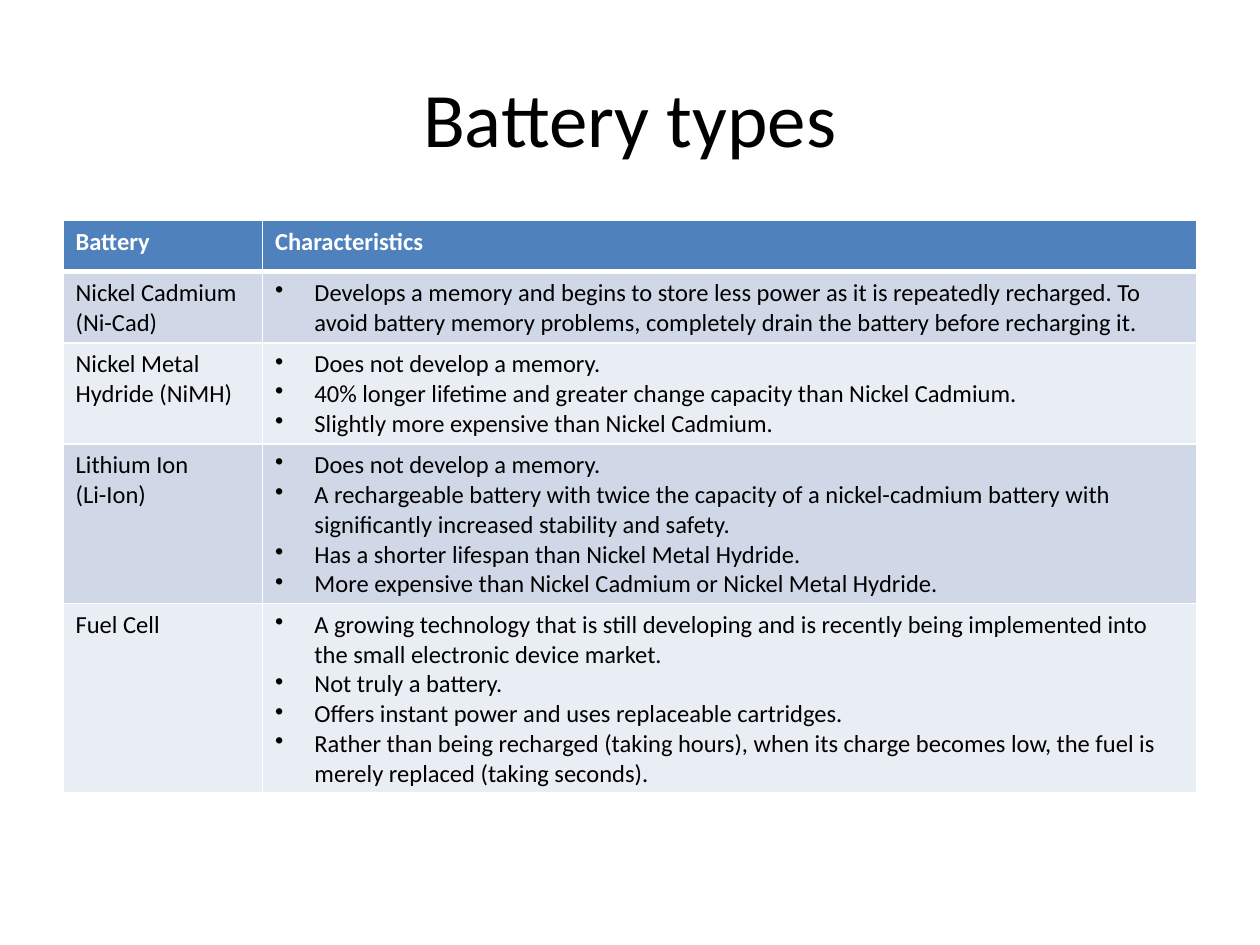
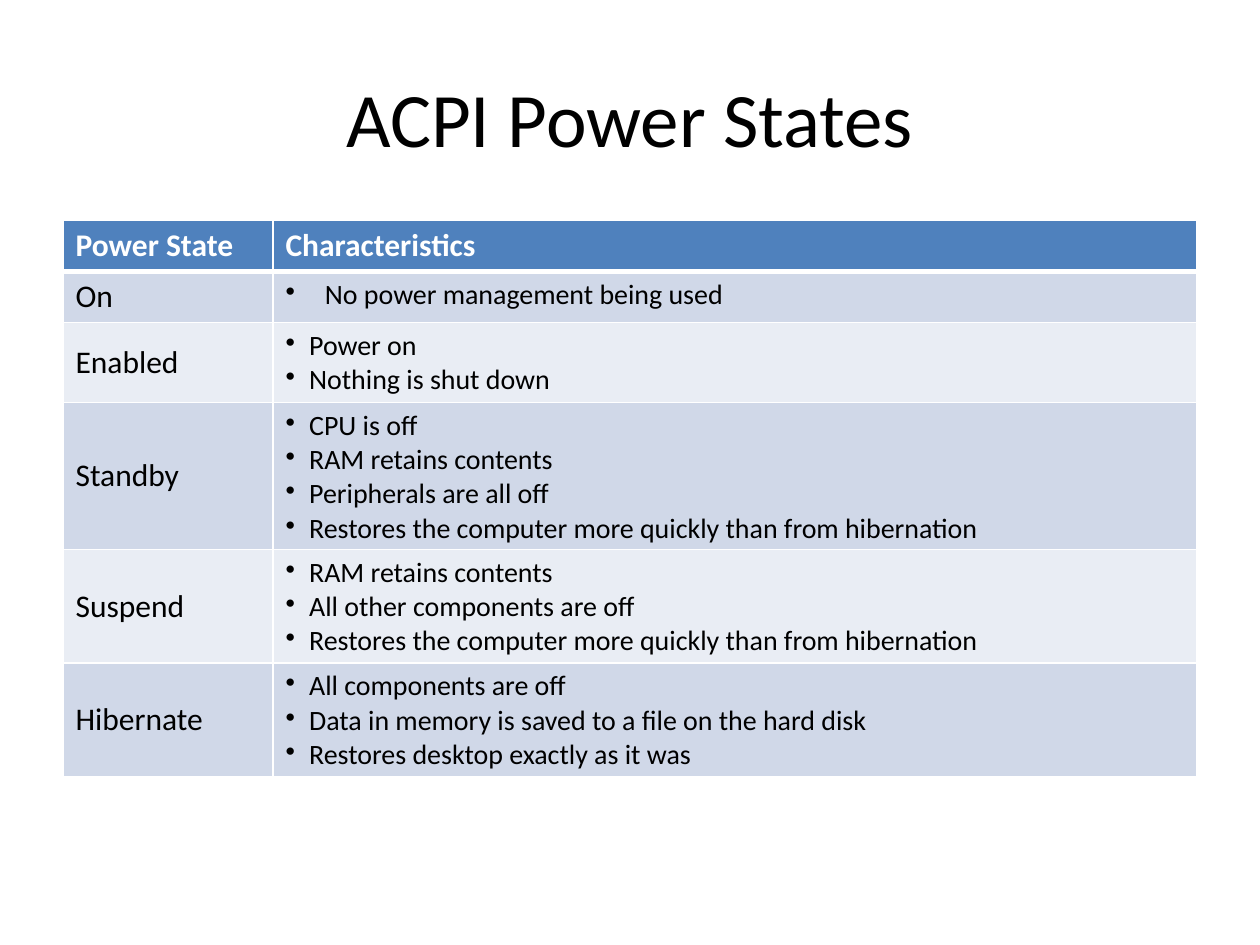
from dataclasses import dataclass

from lxml.etree import SubElement
from pptx import Presentation
from pptx.dml.color import RGBColor
from pptx.enum.text import MSO_ANCHOR as Anchor, PP_ALIGN as Align
from pptx.oxml import parse_xml
from pptx.oxml.ns import nsdecls, qn
from pptx.util import Pt

FONT = "Calibri"
BLACK, WHITE = "000000", "FFFFFF"
HEADER_FILL = "4F81BD"
BAND_FILLS = ("D0D8E8", "E9EDF4")
MARGIN, CONTENT_WIDTH = 36, 648
TABLE_TOP, MIN_ROW_HEIGHT = 126, 29.2
WIDE_INDENT, NARROW_INDENT = 22.5, 13.5
THIN, THICK = 1, 3


@dataclass
class Entry:
    """A named table row with its bulleted characteristics."""
    name: str
    points: list[str]
    indent: float = WIDE_INDENT


@dataclass
class TablePage:
    """A titled slide holding one two-column table."""
    title: str
    name_heading: str
    name_width: float
    name_size: float
    point_size: float
    name_anchor: Anchor
    entries: list[Entry]


PAGES = [
    TablePage("Battery types", "Battery", 114, 14, 14, Anchor.TOP, [
        Entry("Nickel Cadmium (Ni-Cad)", [
            "Develops a memory and begins to store less power as it is repeatedly recharged. "
            "To avoid battery memory problems, completely drain the battery before recharging it."]),
        Entry("Nickel Metal Hydride (NiMH)", [
            "Does not develop a memory.",
            "40% longer lifetime and greater change capacity than Nickel Cadmium.",
            "Slightly more expensive than Nickel Cadmium."]),
        Entry("Lithium Ion\n(Li-Ion)", [
            "Does not develop a memory.",
            "A rechargeable battery with twice the capacity of a nickel-cadmium battery "
            "with significantly increased stability and safety.",
            "Has a shorter lifespan than Nickel Metal Hydride.",
            "More expensive than Nickel Cadmium or Nickel Metal Hydride."]),
        Entry("Fuel Cell", [
            "A growing technology that is still developing and is recently being implemented "
            "into the small electronic device market.",
            "Not truly a battery.",
            "Offers instant power and uses replaceable cartridges.",
            "Rather than being recharged (taking hours), when its charge becomes low, "
            "the fuel is merely replaced (taking seconds)."]),
    ]),
    TablePage("ACPI Power States", "Power State", 120, 18, 16, Anchor.MIDDLE, [
        Entry("On", ["No power management being used"]),
        Entry("Enabled", ["Power on", "Nothing is shut down"], NARROW_INDENT),
        Entry("Standby", [
            "CPU is off",
            "RAM retains contents",
            "Peripherals are all off",
            "Restores the computer more quickly than from hibernation"], NARROW_INDENT),
        Entry("Suspend", [
            "RAM retains contents",
            "All other components are off",
            "Restores the computer more quickly than from hibernation"], NARROW_INDENT),
        Entry("Hibernate", [
            "All components are off",
            "Data in memory is saved to a file on the hard disk",
            "Restores desktop exactly as it was"], NARROW_INDENT),
    ]),
]


def color(value: str) -> RGBColor:
    """Turn a hex string into a colour."""
    return RGBColor.from_string(value)


def write(frame, text: str, size: float, ink: str = BLACK, bold: bool = False) -> None:
    """Fill a text frame and format all its runs."""
    frame.text = text
    for para in frame.paragraphs:
        for span in para.runs:
            span.font.name = FONT
            span.font.size = Pt(size)
            span.font.bold = bold
            span.font.color.rgb = color(ink)


def add_bullets(frame, indent: float) -> None:
    """Give every paragraph a hanging round bullet."""
    for para in frame.paragraphs:
        properties = para._p.get_or_add_pPr()
        properties.set("marL", str(Pt(indent)))
        properties.set("indent", str(-Pt(indent)))
        SubElement(properties, qn("a:buChar"), char="•")


def paint_cell(cell, fill: str, top: float = THIN, bottom: float = THIN) -> None:
    """Set the fill and white borders of a cell."""
    cell.fill.solid()
    cell.fill.fore_color.rgb = color(fill)
    borders = {"lnL": THIN, "lnR": THIN, "lnT": top, "lnB": bottom}
    for position, (tag, width) in enumerate(borders.items()):
        cell._tc.get_or_add_tcPr().insert(position, parse_xml(
            f'<a:{tag} {nsdecls("a")} w="{Pt(width)}"><a:solidFill>'
            f'<a:srgbClr val="{WHITE}"/></a:solidFill></a:{tag}>'))


def add_title(slide, title: str) -> None:
    """Add the centred slide title."""
    box = slide.shapes.add_textbox(Pt(MARGIN), Pt(21.6), Pt(CONTENT_WIDTH), Pt(90))
    box.text_frame.word_wrap = True
    box.text_frame.vertical_anchor = Anchor.MIDDLE
    write(box.text_frame, title, 44)
    box.text_frame.paragraphs[0].alignment = Align.CENTER


def add_characteristics(slide, page: TablePage) -> None:
    """Add the table of names and characteristics."""
    row_count = len(page.entries) + 1
    table = slide.shapes.add_table(
        row_count, 2, Pt(MARGIN), Pt(TABLE_TOP),
        Pt(CONTENT_WIDTH), Pt(MIN_ROW_HEIGHT * row_count)).table
    table.columns[0].width = Pt(page.name_width)
    table.columns[1].width = Pt(CONTENT_WIDTH - page.name_width)

    for column, heading in enumerate((page.name_heading, "Characteristics")):
        cell = table.cell(0, column)
        write(cell.text_frame, heading, page.name_size, WHITE, bold=True)
        cell.vertical_anchor = page.name_anchor
        paint_cell(cell, HEADER_FILL, bottom=THICK)

    for row, entry in enumerate(page.entries, start=1):
        name_cell, points_cell = table.cell(row, 0), table.cell(row, 1)
        write(name_cell.text_frame, entry.name, page.name_size)
        name_cell.vertical_anchor = page.name_anchor
        write(points_cell.text_frame, "\n".join(entry.points), page.point_size)
        add_bullets(points_cell.text_frame, entry.indent)
        for cell in (name_cell, points_cell):
            paint_cell(cell, BAND_FILLS[(row - 1) % 2], top=THICK if row == 1 else THIN)


def main() -> None:
    """Build and save the deck."""
    deck = Presentation()
    deck.slide_width, deck.slide_height = Pt(720), Pt(540)
    for page in PAGES:
        slide = deck.slides.add_slide(deck.slide_layouts[6])
        add_title(slide, page.title)
        add_characteristics(slide, page)
    deck.save("out.pptx")


if __name__ == "__main__":
    main()
